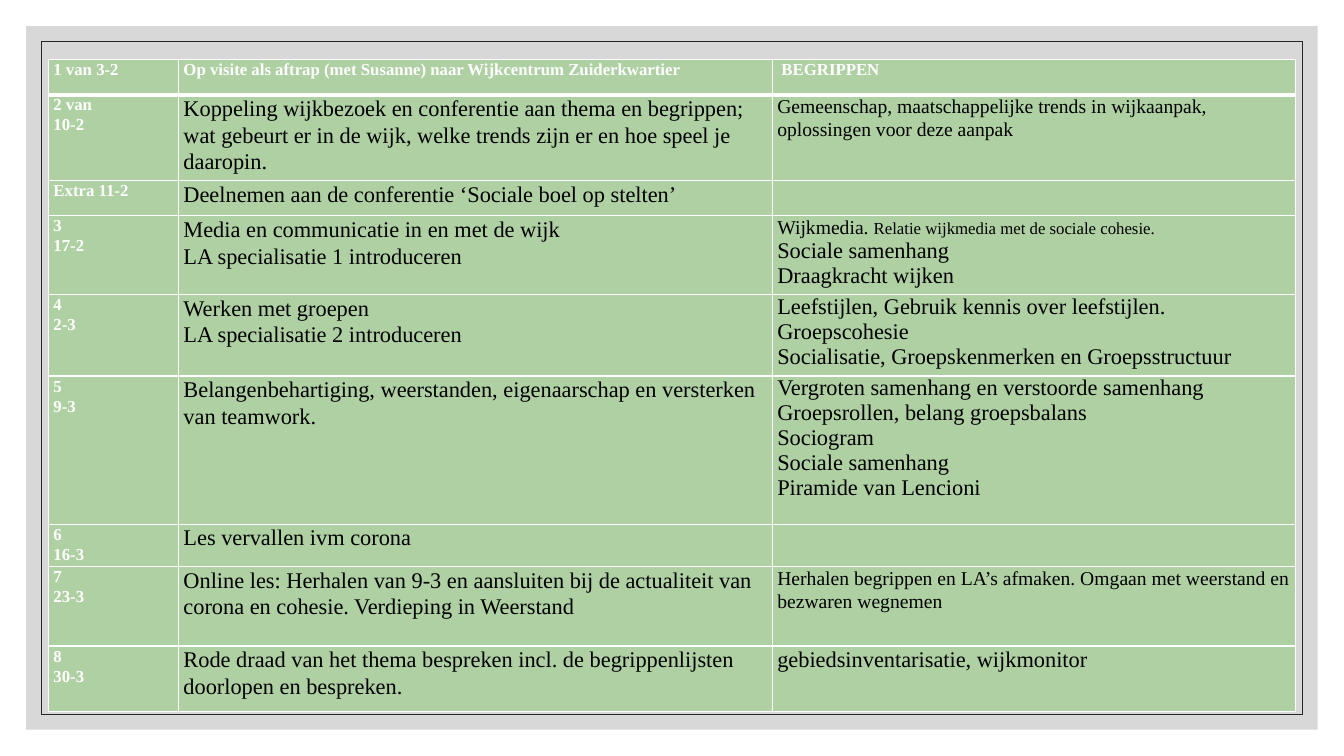
"""Build a lesson planning slide: a framed table of dates, activities and concepts."""
from lxml.etree import SubElement
from pptx import Presentation
from pptx.dml.color import RGBColor
from pptx.enum.shapes import MSO_SHAPE
from pptx.oxml import parse_xml
from pptx.oxml.ns import nsdecls, qn
from pptx.util import Inches, Pt

WHITE = RGBColor(0xFF, 0xFF, 0xFF)
BLACK = RGBColor(0, 0, 0)
GREEN = RGBColor(0xAF, 0xD0, 0xA3)
GRAY = RGBColor(0xBF, 0xBF, 0xBF)
DARK = RGBColor(0x26, 0x26, 0x26)
FONT = "Times New Roman"
LOOSE, SINGLE = 1.07, 1.0

COLUMN_WIDTHS = [1.29, 5.89, 5.19]
ROW_HEIGHTS = [0.35, 0.85, 0.35, 0.78, 0.81, 1.47, 0.42, 0.79, 0.65]
LESSONS = [
    (["1 van 3-2"],
     ["Op visite als aftrap (met Susanne) naar Wijkcentrum Zuiderkwartier"],
     [(LOOSE, [(" BEGRIPPEN", 12)])]),
    (["2 van", "10-2"],
     ["Koppeling wijkbezoek en conferentie aan thema en begrippen; wat gebeurt er "
      "in de wijk, welke trends zijn er en hoe speel je daaropin."],
     [(LOOSE, [("Gemeenschap, maatschappelijke trends in wijkaanpak, "
                "oplossingen voor deze aanpak", 14)])]),
    (["Extra 11-2"],
     ["Deelnemen aan de conferentie ‘Sociale boel op stelten’"],
     []),
    (["3", "17-2"],
     ["Media en communicatie in en met de wijk", "LA specialisatie 1 introduceren"],
     [(LOOSE, [("Wijkmedia. ", 14), ("Relatie wijkmedia met de sociale cohesie.", 12)]),
      (SINGLE, [("Sociale samenhang", 16)]),
      (SINGLE, [("Draagkracht wijken", 16)])]),
    (["4", "2-3"],
     ["Werken met groepen", "LA specialisatie 2 introduceren"],
     [(SINGLE, [("Leefstijlen, Gebruik kennis over leefstijlen. Groepscohesie", 16)]),
      (SINGLE, [("Socialisatie, Groepskenmerken en Groepsstructuur", 16)])]),
    (["5", "9-3"],
     ["Belangenbehartiging, weerstanden, eigenaarschap en versterken van teamwork."],
     [(SINGLE, [(concept, 16)]) for concept in (
         "Vergroten samenhang en verstoorde samenhang",
         "Groepsrollen, belang groepsbalans",
         "Sociogram", "Sociale samenhang", "Piramide van Lencioni")]),
    (["6", "16-3"], ["Les vervallen ivm corona"], []),
    (["7", "23-3"],
     ["Online les: Herhalen van 9-3 en aansluiten bij de actualiteit van corona en "
      "cohesie. Verdieping in Weerstand"],
     [(LOOSE, [("Herhalen begrippen en LA’s afmaken. Omgaan met weerstand en "
                "bezwaren wegnemen", 14)])]),
    (["8", "30-3"],
     ["Rode draad van het thema bespreken incl. de begrippenlijsten doorlopen en bespreken."],
     [(LOOSE, [("gebiedsinventarisatie, wijkmonitor", 16)])]),
]


def write_span(para, text, size=16, color=BLACK, bold=False):
    span = para.add_run()
    span.text = text
    span.font.name = FONT
    span.font.size = Pt(size)
    span.font.bold = bold
    span.font.color.rgb = color


def style_cell(cell, top_width=1, bottom_width=1):
    cell.margin_left = cell.margin_right = Inches(0.05)
    cell.margin_top = cell.margin_bottom = 0
    cell.fill.solid()
    cell.fill.fore_color.rgb = GREEN
    properties = cell._tc.get_or_add_tcPr()
    widths = {"lnL": 1, "lnR": 1, "lnT": top_width, "lnB": bottom_width}
    for position, (side, width) in enumerate(widths.items()):
        properties.insert(position, parse_xml(
            f'<a:{side} {nsdecls("a")} w="{Pt(width)}"><a:solidFill>'
            f'<a:srgbClr val="{WHITE}"/></a:solidFill></a:{side}>'))


deck = Presentation()
deck.slide_width, deck.slide_height = Inches(13.33), Inches(7.5)
page = deck.slides.add_slide(deck.slide_layouts[6])

backdrop, frame = [
    page.shapes.add_shape(
        MSO_SHAPE.RECTANGLE, Inches(inset), Inches(inset),
        deck.slide_width - 2 * Inches(inset), deck.slide_height - 2 * Inches(inset))
    for inset in (0.26, 0.41)]
backdrop.shadow.inherit = frame.shadow.inherit = False
backdrop.fill.solid()
backdrop.fill.fore_color.rgb = GRAY
backdrop.line.fill.background()
shade = backdrop._element.spPr.find(qn("a:solidFill"))[0]
SubElement(shade, qn("a:alpha"), val="60000")
frame.fill.background()
frame.line.color.rgb = DARK
frame.line.width = Pt(0.5)

table = page.shapes.add_table(
    len(LESSONS), len(COLUMN_WIDTHS), Inches(0.48), Inches(0.59),
    Inches(sum(COLUMN_WIDTHS)), Inches(sum(ROW_HEIGHTS))).table
table.horz_banding = False
for column, width in zip(table.columns, COLUMN_WIDTHS):
    column.width = Inches(width)
for row, height in zip(table.rows, ROW_HEIGHTS):
    row.height = Inches(height)

for index, (dates, activities, concepts) in enumerate(LESSONS):
    header = index == 0
    activity_size = 12 if header else 16
    contents = [
        [(LOOSE, [(date, 12)]) for date in dates],
        [(LOOSE, [(activity, activity_size)]) for activity in activities],
        concepts]
    for number, paragraphs in enumerate(contents):
        cell = table.cell(index, number)
        style_cell(cell, top_width=3 if index == 1 else 1, bottom_width=3 if header else 1)
        strong = header or number == 0
        for order, (spacing, spans) in enumerate(paragraphs):
            frame_text = cell.text_frame
            para = frame_text.add_paragraph() if order else frame_text.paragraphs[0]
            para.line_spacing = spacing
            for text, size in spans:
                write_span(para, text, size=size, bold=strong,
                           color=WHITE if strong else BLACK)

deck.save("out.pptx")
